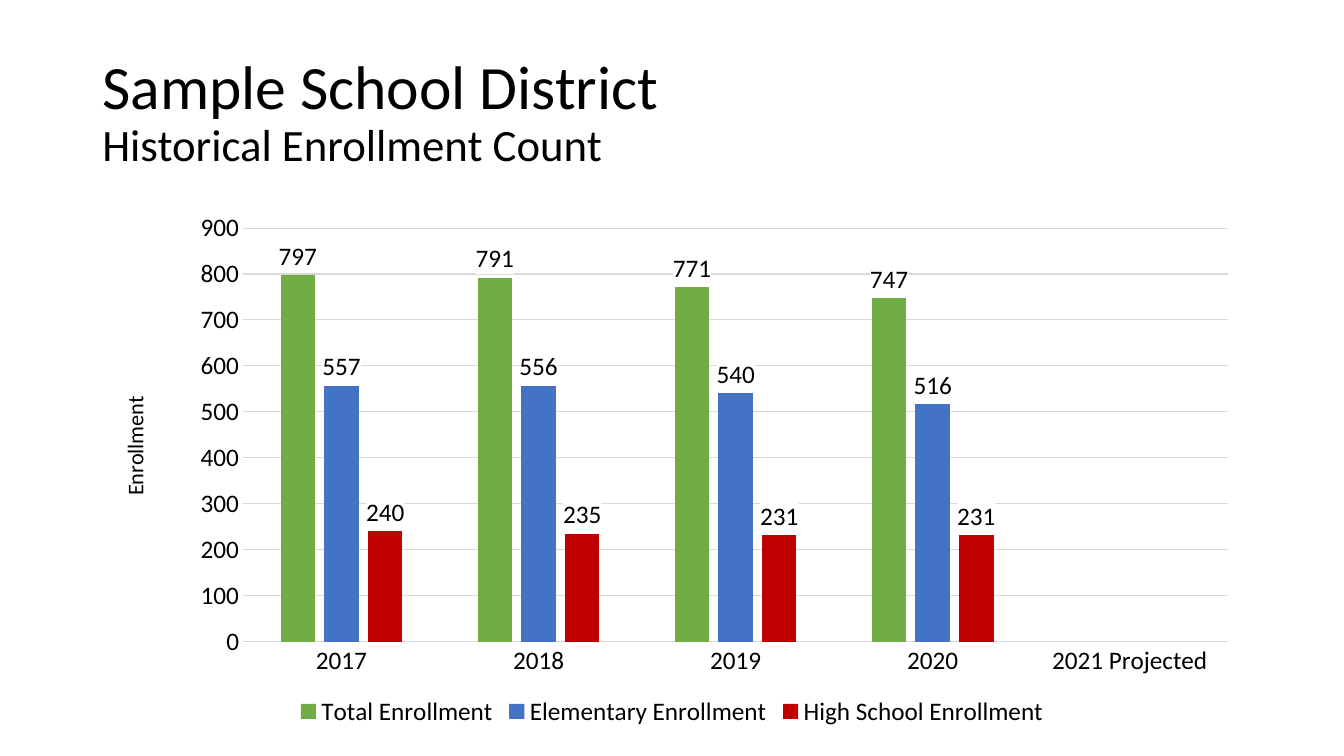
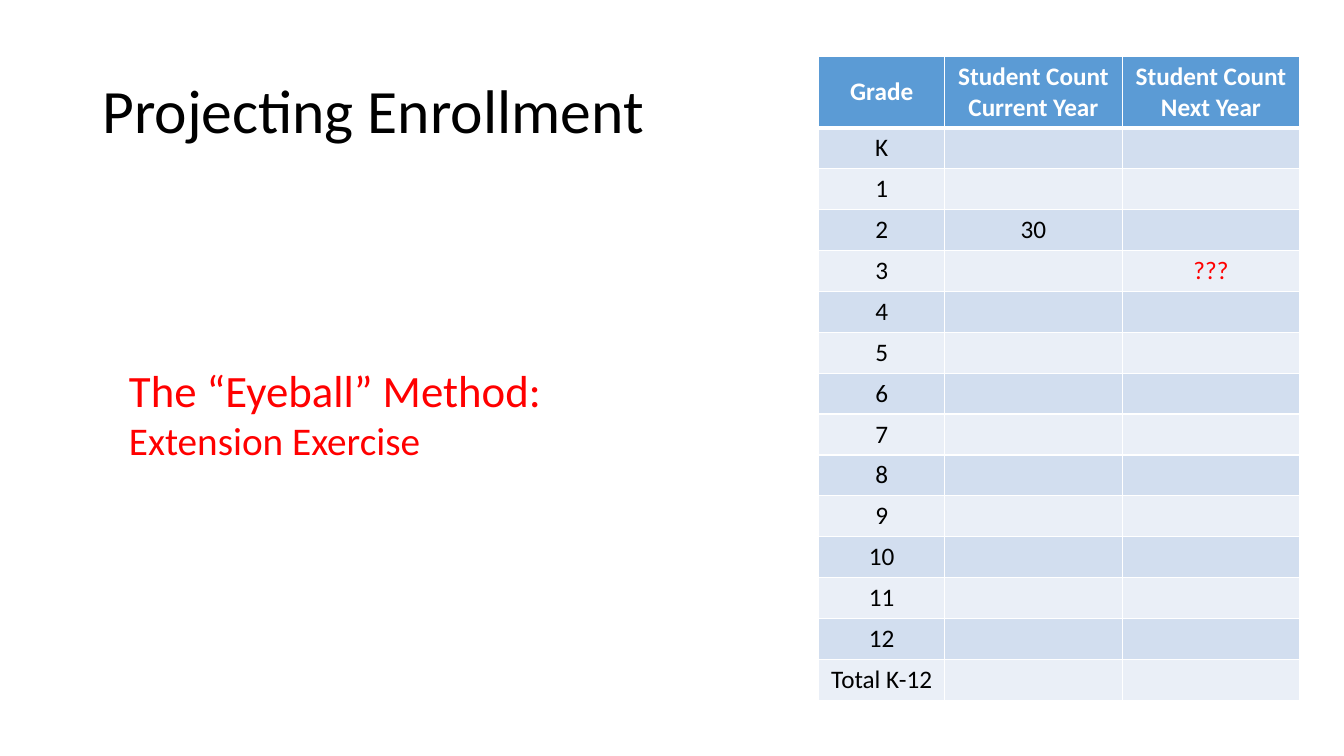
from lxml import etree
from pptx import Presentation
from pptx.chart import data as cd
from pptx.dml import color as dc
from pptx.enum import chart as ec, text as et
from pptx.oxml import ns
from pptx.util import Pt

FONT = "Calibri"
BLACK, WHITE, RED, GRID = "000000", "FFFFFF", "FF0000", "D9D9D9"
HEAD, BANDS = "5B9BD5", ("D2DEEF", "EAEFF7")


def rgb(code):
    return dc.RGBColor.from_string(code)


def node(tag, *kids, **attrs):
    item = etree.Element(ns.qn(tag), attrs)
    item.extend(kids)
    return item


def solid(code):
    return node("a:solidFill", node("a:srgbClr", val=code))


def place(parent, index, **spots):
    for old in parent.findall(ns.qn("c:layout")):
        parent.remove(old)
    parts = [node("c:xMode", val="edge"), node("c:yMode", val="edge")]
    parts += [node("c:" + key, val=str(val)) for key, val in spots.items()]
    if "w" in spots:
        parts.insert(0, node("c:layoutTarget", val="inner"))
    parent.insert(index, node("c:layout", node("c:manualLayout", *parts)))


class Deck:
    def __init__(self):
        self.prs = Presentation()
        self.prs.slide_width, self.prs.slide_height = Pt(960), Pt(540)

    def page(self, *title):
        self.slide = self.prs.slides.add_slide(self.prs.slide_layouts[6])
        sized = zip(title, (44, 32))
        self.text((66, 28.8, 828, 104.4), sized, space=0.9, anchor=et.MSO_ANCHOR.MIDDLE)

    def font(self, font, size, color=BLACK, bold=False):
        font.name, font.size, font.bold = FONT, Pt(size), bold
        font.color.rgb = rgb(color)

    def text(self, box, lines, color=BLACK, space=1.0, anchor=et.MSO_ANCHOR.TOP):
        frame = self.slide.shapes.add_textbox(*map(Pt, box)).text_frame
        frame.word_wrap, frame.vertical_anchor = True, anchor
        for n, (words, size) in enumerate(lines):
            para = frame.add_paragraph() if n else frame.paragraphs[0]
            para.text, para.line_spacing = words, space
            self.font(para.font, size, color)

    def cell(self, cell, words, fill, color=BLACK, head=False):
        cell.fill.solid()
        cell.fill.fore_color.rgb = rgb(fill)
        if head:
            cell.vertical_anchor = et.MSO_ANCHOR.MIDDLE
        para = cell.text_frame.paragraphs[0]
        para.text, para.alignment = words, et.PP_ALIGN.CENTER
        self.font(para.font, 18, color, head)
        props = cell._tc.get_or_add_tcPr()
        for n, side in enumerate("LRTB"):
            width = Pt(3 if head and side == "B" else 1)
            props.insert(n, node("a:ln" + side, solid(WHITE), w=str(width)))

    def table(self, box, widths, top, heads, rows, marks):
        count = len(rows) + 1
        frame = self.slide.shapes.add_table(count, len(heads), *map(Pt, box))
        table = frame.table
        for col, width in zip(table.columns, widths):
            col.width = Pt(width)
        for r, row in enumerate(table.rows):
            row.height = Pt(top if r == 0 else (box[3] - top) / len(rows))
        for c, head in enumerate(heads):
            self.cell(table.cell(0, c), head, HEAD, WHITE, True)
        for r, label in enumerate(rows):
            for c in range(len(heads)):
                words, color = marks.get((label, c), ("", BLACK))
                self.cell(table.cell(r + 1, c), words if c else label, BANDS[r % 2], color)

    def bars(self, box, cats, sets, title):
        data = cd.CategoryChartData(number_format="#,##0")
        data.categories = cats
        for name, _, vals in sets:
            data.add_series(name, vals)
        kind = ec.XL_CHART_TYPE.COLUMN_CLUSTERED
        chart = self.slide.shapes.add_chart(kind, *map(Pt, box), data).chart
        self.font(chart.font, 18)
        chart.has_title = False
        chart.has_legend = True
        chart.legend.position = ec.XL_LEGEND_POSITION.BOTTOM
        chart.legend.include_in_layout = False
        self.font(chart.legend.font, 18)
        self.axes(chart, title)
        plot = chart.plots[0]
        plot.gap_width, plot.overlap, plot.vary_by_categories = 219, -27, False
        place(plot._element.getparent(), 0, x=0.13, y=0.05, w=0.85, h=0.78)
        for series, (_, color, _) in zip(plot.series, sets):
            self.series(series, color)

    def axes(self, chart, title):
        cat, val = chart.category_axis, chart.value_axis
        for axis in (cat, val):
            axis.major_tick_mark = axis.minor_tick_mark = ec.XL_TICK_MARK.NONE
            self.font(axis.tick_labels.font, 18)
        val.minimum_scale, val.maximum_scale, val.major_unit = 0, 900, 100
        val.tick_labels.number_format = "#,##0"
        val.tick_labels.number_format_is_linked = False
        val.format.line.fill.background()
        for line in (cat.format.line, val.major_gridlines.format.line):
            line.color.rgb, line.width = rgb(GRID), Pt(0.75)
        para = val.axis_title.text_frame.paragraphs[0]
        para.text = title
        self.font(para.font, 16)
        place(val.axis_title._element, 1, x=0.02, y=0.36)

    def series(self, series, color):
        series.format.fill.solid()
        series.format.fill.fore_color.rgb = rgb(color)
        series.invert_if_negative = False
        labels = series.data_labels
        labels.show_value = True
        labels.position = ec.XL_LABEL_POSITION.OUTSIDE_END
        labels.number_format, labels.number_format_is_linked = "#,##0", False
        self.font(labels.font, 18)
        props = labels._element.find(ns.qn("c:txPr"))
        props.addprevious(node("c:spPr", solid(WHITE)))


def main():
    deck = Deck()
    deck.page("Sample School District", "Historical Enrollment Count")
    deck.bars(
        (66, 144, 828, 378.72),
        ["2017", "2018", "2019", "2020", "2021 Projected"],
        [
            ("Total Enrollment", "70AD47", (797, 791, 771, 747)),
            ("Elementary Enrollment", "4472C4", (557, 556, 540, 516)),
            ("High School Enrollment", "C00000", (240, 235, 231, 231)),
        ],
        "Enrollment",
    )
    deck.page("Projecting Enrollment")
    deck.table(
        (584.8, 40.4, 343.6, 460),
        (90, 126.8, 126.8),
        51,
        ("Grade", "Student Count Current Year", "Student Count Next Year"),
        ["K", *map(str, range(1, 13)), "Total K-12"],
        {("2", 1): ("30", BLACK), ("3", 2): ("???", RED)},
    )
    lines = [("The “Eyeball” Method:", 32), ("Extension Exercise", 28)]
    deck.text((85, 255.6, 320, 80), lines, RED)
    deck.prs.save("out.pptx")


if __name__ == "__main__":
    main()
